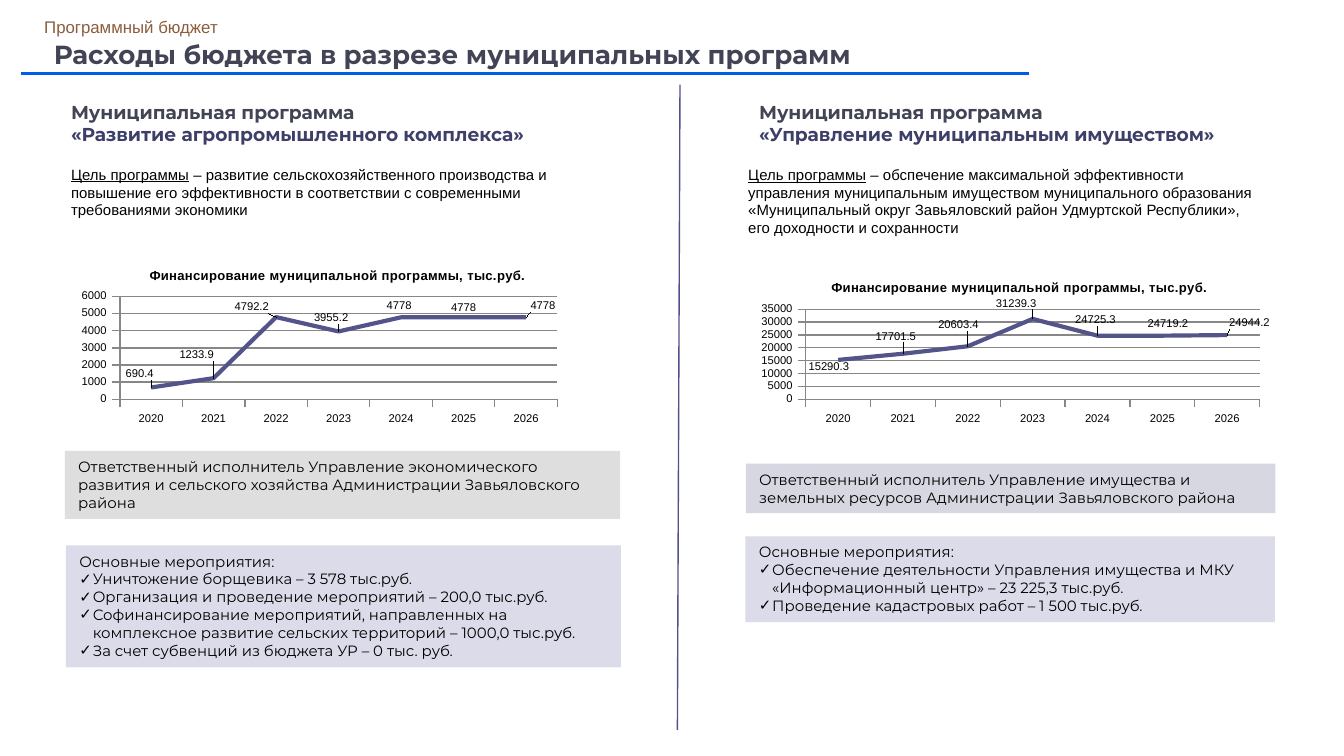
from lxml.etree import SubElement
from pptx import Presentation
from pptx.chart.data import CategoryChartData
from pptx.dml.color import RGBColor
from pptx.enum.chart import XL_CHART_TYPE, XL_LABEL_POSITION, XL_TICK_MARK
from pptx.enum.shapes import MSO_CONNECTOR, MSO_SHAPE
from pptx.enum.text import MSO_ANCHOR, MSO_AUTO_SIZE, PP_ALIGN
from pptx.oxml.ns import qn
from pptx.util import Pt

YEARS = [str(year) for year in range(2020, 2027)]
DARK, INDIGO, BLACK = "424456", "3E3F68", "000000"

# Boxes are (left, top, width, height) in points.
PROGRAMS = [
    {
        "name": "«Развитие агропромышленного комплекса»",
        "name_box": (31, 50.4, 282, 31.7),
        "goal": " – развитие сельскохозяйственного производства и повышение его "
                "эффективности в соответствии с современными требованиями экономики",
        "goal_box": (31, 85, 297.4, 36),
        "chart_box": (38.9, 135.4, 266.4, 93.6),
        "plot_area": (0.095, 0.25, 0.88, 0.59),
        "spending": [690.4, 1233.9, 4792.2, 3955.2, 4778, 4778, 4778],
        "axis_step": 1000,
        "axis_maximum": 6000,
        "label_shifts": [(-6, -1), (-9, -6), (-13, 1), (-4, -1), (-1, 0), (0, 1), (9, 0)],
        "executor": "Ответственный исполнитель Управление экономического развития "
                    "и сельского хозяйства Администрации Завьяловского района",
        "executor_box": (34.8, 241.6, 297.4, 36.4),
        "executor_fill": "DEDEDE",
        "activities": [
            "Уничтожение борщевика – 3 578 тыс.руб.",
            "Организация и проведение мероприятий – 200,0 тыс.руб.",
            "Софинансирование мероприятий, направленных на комплексное "
            "развитие сельских территорий – 1000,0 тыс.руб.",
            "За счет субвенций из бюджета УР – 0 тыс. руб.",
        ],
        "activities_box": (35.3, 292.2, 297.4, 65.4),
    },
    {
        "name": "«Управление муниципальным имуществом»",
        "name_box": (399.6, 50.4, 320.4, 31.7),
        "goal": " – обспечение максимальной эффективности управления муниципальным "
                "имуществом муниципального образования «Муниципальный округ "
                "Завьяловский район Удмуртской Республики», его доходности и сохранности",
        "goal_box": (393.8, 85, 290.2, 46),
        "chart_box": (402.5, 142.6, 277.9, 87.1),
        "plot_area": (0.105, 0.265, 0.875, 0.555),
        "spending": [15290.3, 17701.5, 20603.4, 31239.3, 24725.3, 24719.2, 24944.2],
        "axis_step": 5000,
        "axis_maximum": 35000,
        "label_shifts": [(-5, 10), (-4, -3), (-5, -5), (-9, -2), (-1, -2), (3, 0), (12, 0)],
        "executor": "Ответственный исполнитель Управление имущества и земельных "
                    "ресурсов Администрации Завьяловского района",
        "executor_box": (399.6, 248.4, 283.7, 26.6),
        "executor_fill": "D6D7E0",
        "activities": [
            "Обеспечение деятельности Управления имущества и МКУ "
            "«Информационный центр» – 23 225,3 тыс.руб.",
            "Проведение кадастровых работ – 1 500 тыс.руб.",
        ],
        "activities_box": (399.3, 287.3, 283.7, 46.1),
    },
]


def color(value):
    return RGBColor.from_string(value)


def points(box):
    return [Pt(length) for length in box]


def add_run(paragraph, text, size, font="Montserrat", fill=BLACK, bold=False, underline=False):
    run = paragraph.add_run()
    run.text = text
    run.font.size = Pt(size)
    run.font.name = font
    run.font.color.rgb = color(fill)
    run.font.bold = bold
    run.font.underline = underline


def prepare_frame(shape, anchor=MSO_ANCHOR.TOP, margins=(7.2, 3.6)):
    """Set wrapping, anchor and margins; return the frame with its first paragraph left aligned."""
    frame = shape.text_frame
    frame.word_wrap = True
    frame.auto_size = MSO_AUTO_SIZE.NONE
    frame.vertical_anchor = anchor
    frame.margin_left = frame.margin_right = Pt(margins[0])
    frame.margin_top = frame.margin_bottom = Pt(margins[1])
    frame.paragraphs[0].alignment = PP_ALIGN.LEFT
    return frame


def move(shape, box):
    shape.left, shape.top, shape.width, shape.height = points(box)


def add_text_box(slide, box, **frame_options):
    return prepare_frame(slide.shapes.add_textbox(*points(box)), **frame_options)


def add_rectangle(slide, box, fill):
    shape = slide.shapes.add_shape(MSO_SHAPE.RECTANGLE, *points(box))
    shape.shadow.inherit = False
    shape.fill.solid()
    shape.fill.fore_color.rgb = color(fill)
    shape.line.fill.background()
    return shape


def add_divider(slide):
    line = slide.shapes.add_connector(MSO_CONNECTOR.STRAIGHT, *points((364.3, 45.4, 362.9, 391)))
    line.line.color.rgb = color("505188")
    line.line.width = Pt(0.75)
    SubElement(line._element.spPr, qn("a:effectLst"))


def set_bullet(paragraph, character):
    properties = paragraph._p.get_or_add_pPr()
    properties.set("marL", str(Pt(7.2)))
    properties.set("indent", str(-Pt(7.2)))
    if character is None:
        SubElement(properties, qn("a:buNone"))
        return
    bullet_color = SubElement(properties, qn("a:buClr"))
    SubElement(bullet_color, qn("a:srgbClr"), val=BLACK)
    SubElement(properties, qn("a:buFont"), typeface="Arial")
    SubElement(properties, qn("a:buChar"), char=character)


def fill_activities(placeholder, box, activities):
    move(placeholder, box)
    placeholder.fill.solid()
    placeholder.fill.fore_color.rgb = color("DBDBE9")
    frame = prepare_frame(placeholder)
    for index, text in enumerate(["Основные мероприятия:"] + activities):
        paragraph = frame.add_paragraph() if index else frame.paragraphs[0]
        paragraph.space_before = Pt(0)
        set_bullet(paragraph, "✓" if index else None)
        add_run(paragraph, text, 8)


def set_layout(element, position, **values):
    """Give a chart part a manual layout, as its child number position."""
    layout = element.find(qn("c:layout"))
    if layout is not None:
        element.remove(layout)
    layout = element.makeelement(qn("c:layout"))
    element.insert(position, layout)
    manual = SubElement(layout, qn("c:manualLayout"))
    for name, value in values.items():
        SubElement(manual, qn("c:" + name), val=str(value))


def style_axis(axis):
    axis.format.line.color.rgb = color("878787")
    axis.major_tick_mark = XL_TICK_MARK.OUTSIDE
    axis.minor_tick_mark = XL_TICK_MARK.NONE


def add_spending_chart(slide, program):
    data = CategoryChartData()
    data.categories = YEARS
    data.add_series("Series 1", program["spending"])
    box = program["chart_box"]
    chart = slide.shapes.add_chart(XL_CHART_TYPE.LINE, *points(box), data).chart
    chart.has_legend = False
    chart.font.size = Pt(6)
    chart.font.name = "Arial"
    chart.font.color.rgb = color(BLACK)

    chart.has_title = True
    title = chart.chart_title.text_frame.paragraphs[0]
    add_run(title, "Финансирование муниципальной программы, тыс.руб.", 7, "Arial", bold=True)
    title.runs[0].font._element.set("spc", "30")
    set_layout(chart.chart_title._element, 1, xMode="edge", yMode="edge", x=0.15, y=0.07)
    x, y, width, height = program["plot_area"]
    set_layout(chart.element.find(".//" + qn("c:plotArea")), 0, layoutTarget="inner",
               xMode="edge", yMode="edge", x=x, y=y, w=width, h=height)

    style_axis(chart.category_axis)
    style_axis(chart.value_axis)
    chart.value_axis.minimum_scale = 0
    chart.value_axis.maximum_scale = program["axis_maximum"]
    chart.value_axis.major_unit = program["axis_step"]
    chart.value_axis.has_major_gridlines = True
    chart.value_axis.major_gridlines.format.line.color.rgb = color("878787")

    chart.plots[0].vary_by_categories = False
    series = chart.plots[0].series[0]
    series.smooth = False
    series.format.line.color.rgb = color("53548A")
    series.format.line.width = Pt(2.25)
    for index in range(len(YEARS)):
        series.points[index].data_label.position = XL_LABEL_POSITION.ABOVE
    labels = list(chart.element.iter(qn("c:dLbl")))
    for label, (right, down) in zip(labels, program["label_shifts"]):
        set_layout(label, 1, x=round(right / box[2], 3), y=round(down / box[3], 3))


def add_program(slide, program, placeholder):
    frame = add_text_box(slide, program["name_box"])
    add_run(frame.paragraphs[0], "Муниципальная программа", 10, fill=DARK, bold=True)
    add_run(frame.add_paragraph(), program["name"], 10, fill=INDIGO, bold=True)

    goal = add_text_box(slide, program["goal_box"]).paragraphs[0]
    add_run(goal, "Цель программы", 8, "Arial", underline=True)
    add_run(goal, program["goal"], 8, "Arial")

    add_spending_chart(slide, program)
    executor = add_rectangle(slide, program["executor_box"], program["executor_fill"])
    frame = prepare_frame(executor, MSO_ANCHOR.MIDDLE)
    add_run(frame.paragraphs[0], program["executor"], 8)
    fill_activities(placeholder, program["activities_box"], program["activities"])


def add_header(slide):
    title = slide.shapes.title
    move(title, (23.8, 16.6, 648, 26.6))
    paragraph = prepare_frame(title, MSO_ANCHOR.MIDDLE, (5, 3)).paragraphs[0]
    paragraph.line_spacing = 0.9
    add_run(paragraph, "Расходы бюджета в разрезе муниципальных программ", 14, fill=DARK, bold=True)

    section = add_text_box(slide, (18.7, 5.8, 141, 16.6), margins=(5, 3)).paragraphs[0]
    add_run(section, "Программный бюджет", 9, "Arial", "8B5D3D")
    underline = add_rectangle(slide, (10.8, 38.2, 540.7, 2.2), "005EE4")
    underline.line.color.rgb = color("FFFFFF")
    underline.line.width = Pt(0.75)


def main():
    presentation = Presentation()
    presentation.slide_width = Pt(720)
    presentation.slide_height = Pt(405)
    slide = presentation.slides.add_slide(presentation.slide_layouts[3])
    add_header(slide)
    add_divider(slide)
    for program, placeholder in zip(PROGRAMS, list(slide.placeholders)[1:]):
        add_program(slide, program, placeholder)
    presentation.save("out.pptx")


if __name__ == "__main__":
    main()
